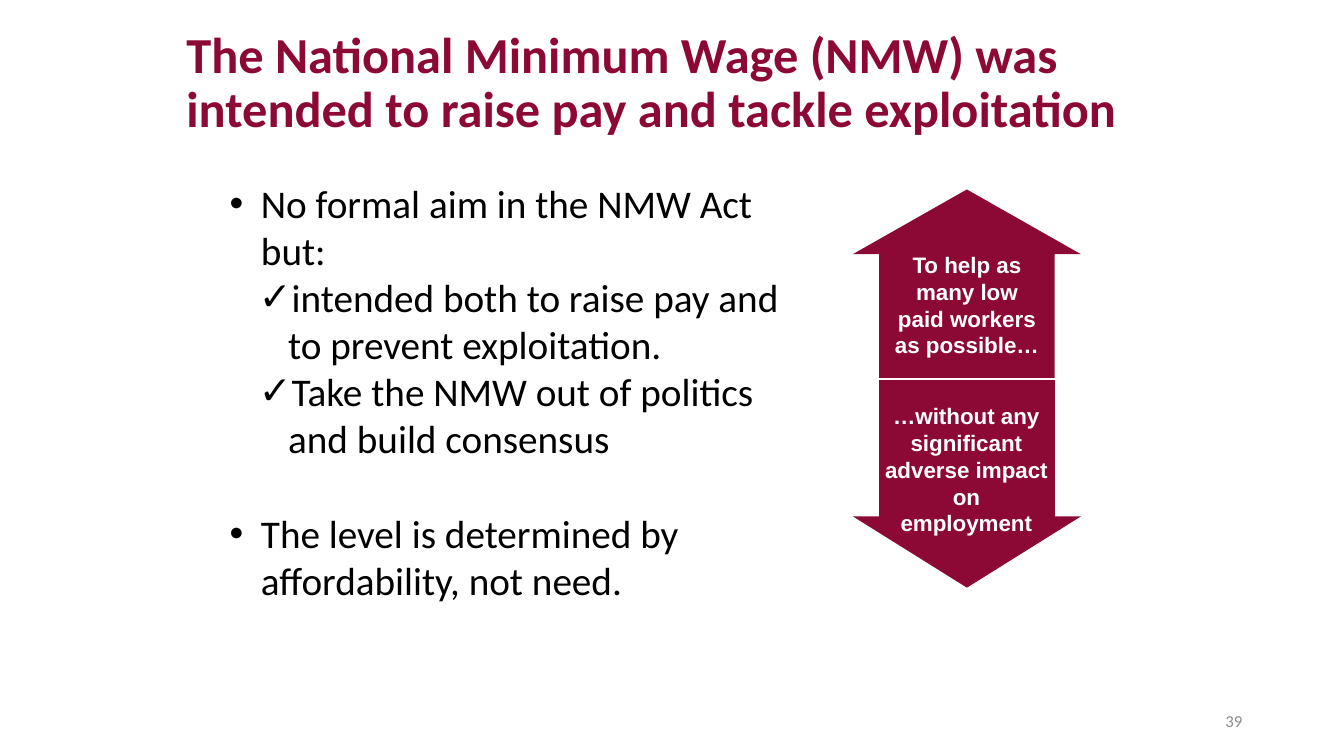
from lxml.etree import SubElement
from pptx import Presentation
from pptx.dml.color import RGBColor
from pptx.enum.shapes import MSO_SHAPE
from pptx.enum.text import MSO_ANCHOR, PP_ALIGN
from pptx.oxml.ns import qn
from pptx.util import Inches, Pt

MAROON = "8C0935"


def color(value):
    return RGBColor.from_string(value)


def add_text(page, place, paragraphs, look, anchor=MSO_ANCHOR.TOP, align=PP_ALIGN.LEFT):
    box = page.shapes.add_textbox(*[Inches(length) for length in place])
    box.text_frame.word_wrap = True
    box.text_frame.vertical_anchor = anchor
    for index, text in enumerate(paragraphs):
        para = box.text_frame.paragraphs[0] if index == 0 else box.text_frame.add_paragraph()
        para.alignment = align
        span = para.add_run()
        span.text = text
        span.font.color.rgb = color(look["color"])
        for name, value in look["font"].items():
            setattr(span.font, name, value)
    return box.text_frame.paragraphs


deck = Presentation()
deck.slide_width, deck.slide_height = Inches(13.33), Inches(7.5)
page = deck.slides.add_slide(deck.slide_layouts[6])

# Text looks
title_look = {"color": MAROON, "font": {"name": "Calibri", "size": Pt(36), "bold": True}}
arrow_look = {"color": "FFFFFF", "font": {"name": "Arial", "size": Pt(16), "bold": True}}
body_look = {"color": "000000", "font": {"name": "Calibri", "size": Pt(28)}}
number_look = {"color": "8C8C8C", "font": {"name": "Calibri", "size": Pt(12)}}

# Title
title = add_text(page, (1.75, 0.21, 9.65, 1.25),
                 ["The National Minimum Wage (NMW) was intended to raise pay and tackle exploitation"],
                 title_look, MSO_ANCHOR.MIDDLE)
title[0].line_spacing = 0.9

# Opposing arrows with their labels
arrows = [
    (1.88, 1.87, 0, (8.73, 2.44, 1.72, 1.18), "To help as many low paid workers as possible…"),
    (3.77, 2.06, 180, (8.67, 3.94, 1.83, 1.45),
     "…without any significant adverse impact on employment"),
]
for top, height, turn, label_place, label in arrows:
    arrow = page.shapes.add_shape(MSO_SHAPE.UP_ARROW, Inches(8.46), Inches(top),
                                  Inches(2.26), Inches(height))
    arrow.adjustments[0], arrow.adjustments[1] = 0.771, 0.343
    arrow.rotation = turn
    arrow.shadow.inherit = False
    arrow.fill.solid()
    arrow.fill.fore_color.rgb = color(MAROON)
    arrow.line.fill.background()
    add_text(page, label_place, [label], arrow_look, align=PP_ALIGN.CENTER)

# Bulleted aims: text, bullet, left margin, space before
aims = [
    ("No formal aim in the NMW Act but:", "•", 0.31, 0),
    ("intended both to raise pay and to prevent exploitation.", "✓", 0.58, 0),
    ("Take the NMW out of politics and build consensus", "✓", 0.58, 0),
    ("The level is determined by affordability, not need.", "•", 0.31, 34),
]
hanging = {"•": 0.31, "✓": 0.29}
aim_paras = add_text(page, (2.18, 1.73, 5.91, 4.81), [aim[0] for aim in aims], body_look)
for para, (text, bullet, margin, gap) in zip(aim_paras, aims):
    para.space_before = Pt(gap)
    properties = para._p.get_or_add_pPr()
    properties.set("marL", str(Inches(margin)))
    properties.set("indent", str(-Inches(hanging[bullet])))
    SubElement(properties, qn("a:buFont")).set("typeface", "Arial")
    SubElement(properties, qn("a:buChar")).set("char", bullet)

# Slide number
add_text(page, (9.42, 6.95, 3, 0.4), ["39"], number_look, MSO_ANCHOR.MIDDLE, PP_ALIGN.RIGHT)

deck.save("out.pptx")
